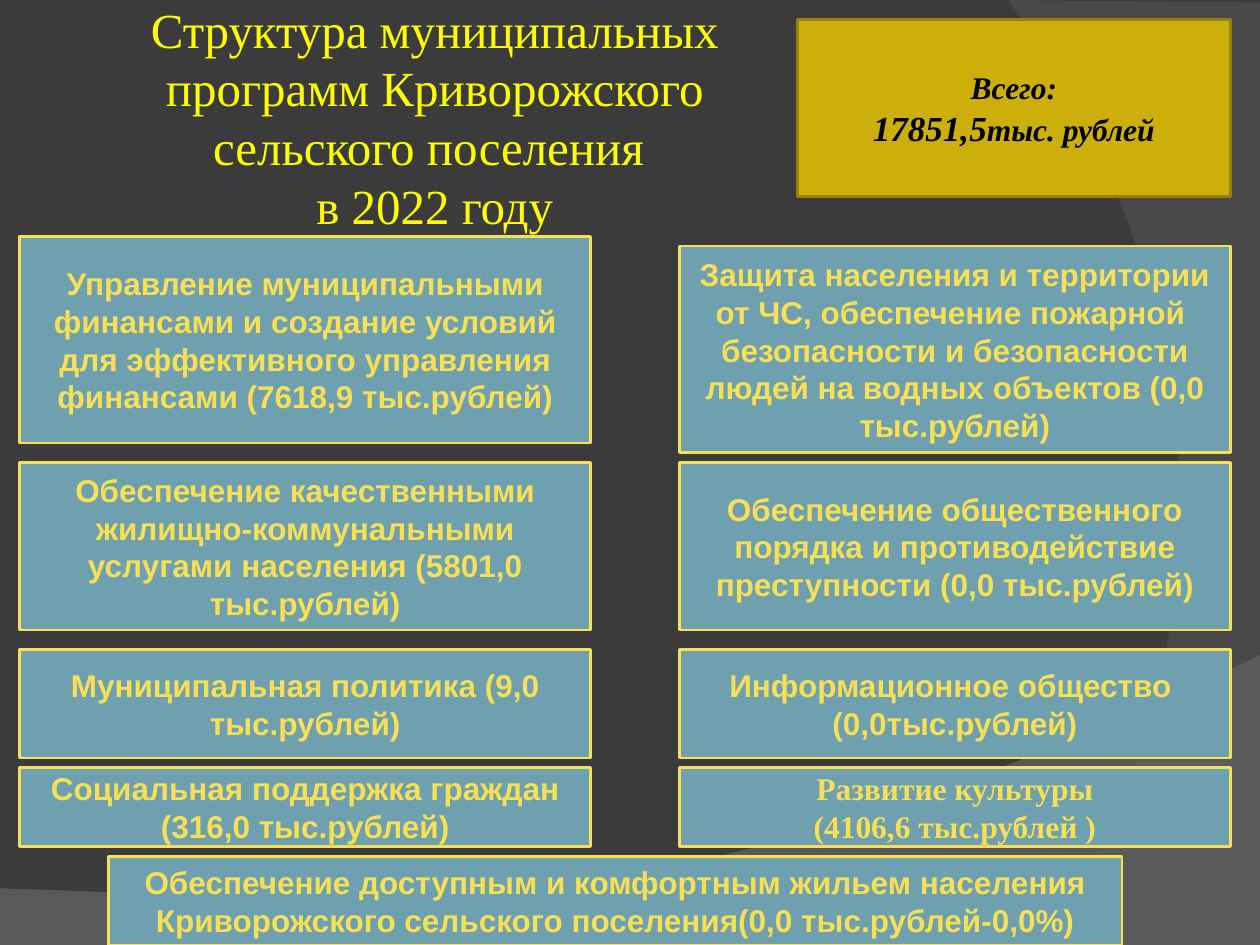
from copy import deepcopy

from lxml import etree
from pptx import Presentation
from pptx.dml.color import RGBColor
from pptx.enum.shapes import MSO_SHAPE
from pptx.enum.text import MSO_ANCHOR, MSO_AUTO_SIZE, PP_ALIGN
from pptx.oxml.ns import qn
from pptx.util import Inches, Pt

RECTANGLE = MSO_SHAPE.RECTANGLE
MIDDLE = MSO_ANCHOR.MIDDLE
CENTER = PP_ALIGN.CENTER
NO_AUTOFIT = MSO_AUTO_SIZE.NONE

BACKGROUND = RGBColor(0x3B, 0x3B, 0x3B)
WAVE_GREY = RGBColor(0x7F, 0x7F, 0x7F)
ARC_GREY = RGBColor(0x5E, 0x5E, 0x5E)
YELLOW = RGBColor(0xFF, 0xFF, 0x00)
BLACK = RGBColor(0x00, 0x00, 0x00)
GOLD = RGBColor(0xCC, 0xAF, 0x0A)
DARK_GOLD = RGBColor(0x97, 0x81, 0x07)
TEAL = RGBColor(0x6E, 0xA0, 0xB0)
LIGHT_YELLOW = RGBColor(0xF7, 0xDF, 0x56)

SANS = "Arial"
SERIF = "Times New Roman"
WIDTH, HEIGHT = 10, 7.5
COLUMNS, ROWS = 128, 96


def add_text(paragraph, text, font=SANS, size=18, color=LIGHT_YELLOW,
             bold=True, italic=False):
    """Add one formatted run to a centred paragraph and return it."""
    paragraph.alignment = CENTER
    run = paragraph.add_run()
    run.text = text
    run.font.name = font
    run.font.size = Pt(size)
    run.font.color.rgb = color
    run.font.bold = bold
    run.font.italic = italic
    return run


def curve_points(start, control_1, control_2, end, steps=40):
    """Points along a cubic curve, without its start."""
    points = []
    for step in range(1, steps + 1):
        t = step / steps
        weights = ((1 - t) ** 3, 3 * t * (1 - t) ** 2, 3 * t * t * (1 - t), t ** 3)
        corners = (start, control_1, control_2, end)
        points.append(tuple(sum(w * corner[axis] for w, corner in zip(weights, corners))
                            for axis in (0, 1)))
    return points


class SlideBuilder:
    def __init__(self, presentation):
        title_only = presentation.slide_layouts[5]
        self.slide = presentation.slides.add_slide(title_only)
        fill = self.slide.background.fill
        fill.solid()
        fill.fore_color.rgb = BACKGROUND

    def grid(self, column, row, columns, rows):
        """Turn grid cells into left, top, width and height."""
        across, down = WIDTH / COLUMNS, HEIGHT / ROWS
        return (Inches(column * across), Inches(row * down),
                Inches(columns * across), Inches(rows * down))

    def title(self, lines, left, top, width, height):
        title = self.slide.shapes.title
        title.left, title.top = Inches(left * WIDTH), Inches(top * HEIGHT)
        title.width, title.height = Inches(width * WIDTH), Inches(height * HEIGHT)
        frame = title.text_frame
        frame.auto_size = NO_AUTOFIT
        frame.word_wrap = True
        frame.vertical_anchor = MIDDLE
        frame.margin_left = frame.margin_right = Inches(0.05)
        frame.margin_top = frame.margin_bottom = Inches(0.05)
        paragraph = frame.paragraphs[0]
        for index, line in enumerate(lines):
            if index:
                # The break takes the format of the run before it
                paragraph.add_line_break()
                paragraph._p[-1].append(deepcopy(run._r.find(qn("a:rPr"))))
            run = add_text(paragraph, line, font=SERIF, size=28, color=YELLOW, bold=False)

    def backdrop(self, points, color, opacity):
        """Draw a translucent outline whose points are in inches."""
        corners = [(Inches(x), Inches(y)) for x, y in points]
        builder = self.slide.shapes.build_freeform(*corners[0])
        builder.add_line_segments(corners[1:], close=True)
        shape = builder.convert_to_shape()
        shape.shadow.inherit = False
        shape.fill.solid()
        shape.fill.fore_color.rgb = color
        shape.line.fill.background()
        color_element = shape.fill._xPr.find(qn("a:solidFill"))[0]
        etree.SubElement(color_element, qn("a:alpha"), val=str(opacity * 1000))

    def box(self, cells, paragraphs, fill=TEAL, line=LIGHT_YELLOW, **text_format):
        """Draw a box; each paragraph is a list of (text, size) runs."""
        shape = self.slide.shapes.add_shape(RECTANGLE, *self.grid(*cells))
        shape.shadow.inherit = False
        shape.fill.solid()
        shape.fill.fore_color.rgb = fill
        shape.line.color.rgb = line
        shape.line.width = Pt(1.5)
        frame = shape.text_frame
        frame.word_wrap = True
        frame.vertical_anchor = MIDDLE
        for index, runs in enumerate(paragraphs):
            paragraph = frame.add_paragraph() if index else frame.paragraphs[0]
            for text, size in runs:
                add_text(paragraph, text, size=size, **text_format)

    def program(self, cells, *lines, font=SANS):
        self.box(cells, [[(line, 18)] for line in lines], font=font)


def main():
    presentation = Presentation()
    presentation.slide_width, presentation.slide_height = Inches(WIDTH), Inches(HEIGHT)
    builder = SlideBuilder(presentation)

    # Background wave and arc
    wave = curve_points((10, 5.2), (5.59, 7.29), (3.91, 7.19), (0, 7.05))
    builder.backdrop([(0, HEIGHT), (10, HEIGHT), (10, 5.2)] + wave, WAVE_GREY, 45)
    arc = curve_points((8.21, 7.5), (9.35, 6.19), (10.18, 3), (8, 0))
    builder.backdrop([(10, 0.02), (10, 7.5), (8.21, 7.5)] + arc, ARC_GREY, 40)

    # Title and total
    builder.title(["Структура муниципальных программ Криворожского сельского поселения ",
                   "в 2022 году"], 0.05, 0.04, 0.59, 0.167)
    builder.box((81, 2, 44, 18), [[("Всего:", 18)], [("17851,5", 20), ("тыс. рублей", 18)]],
                fill=GOLD, line=DARK_GOLD, font=SERIF, color=BLACK, italic=True)

    # Left column of programs: top row, rows, text
    left_programs = [
        (24, 21, "Управление муниципальными финансами и создание условий для "
                 "эффективного управления финансами (7618,9 тыс.рублей)"),
        (47, 17, "Обеспечение качественными жилищно-коммунальными услугами "
                 "населения (5801,0 тыс.рублей)"),
        (66, 11, "Муниципальная политика (9,0 тыс.рублей)"),
        (78, 8, "Социальная поддержка граждан (316,0 тыс.рублей)"),
    ]
    for row, rows, text in left_programs:
        builder.program((2, row, 58, rows), text)

    # Right column of programs: top row, rows, font, lines
    right_programs = [
        (25, 21, SANS, ["Защита населения и территории от ЧС, обеспечение пожарной  "
                        "безопасности и безопасности людей на водных объектов "
                        "(0,0 тыс.рублей)"]),
        (47, 17, SANS, ["Обеспечение общественного порядка и противодействие "
                        "преступности (0,0 тыс.рублей)"]),
        (66, 11, SANS, ["Информационное общество ", "(0,0тыс.рублей)"]),
        (78, 8, SERIF, ["Развитие культуры", "(4106,6 тыс.рублей )"]),
    ]
    for row, rows, font, lines in right_programs:
        builder.program((69, row, 56, rows), *lines, font=font)

    # Bottom program
    builder.program((11, 87, 103, 9),
                    "Обеспечение доступным и комфортным жильем населения "
                    "Криворожского сельского поселения(0,0 тыс.рублей-0,0%)")

    presentation.save("out.pptx")


if __name__ == "__main__":
    main()
